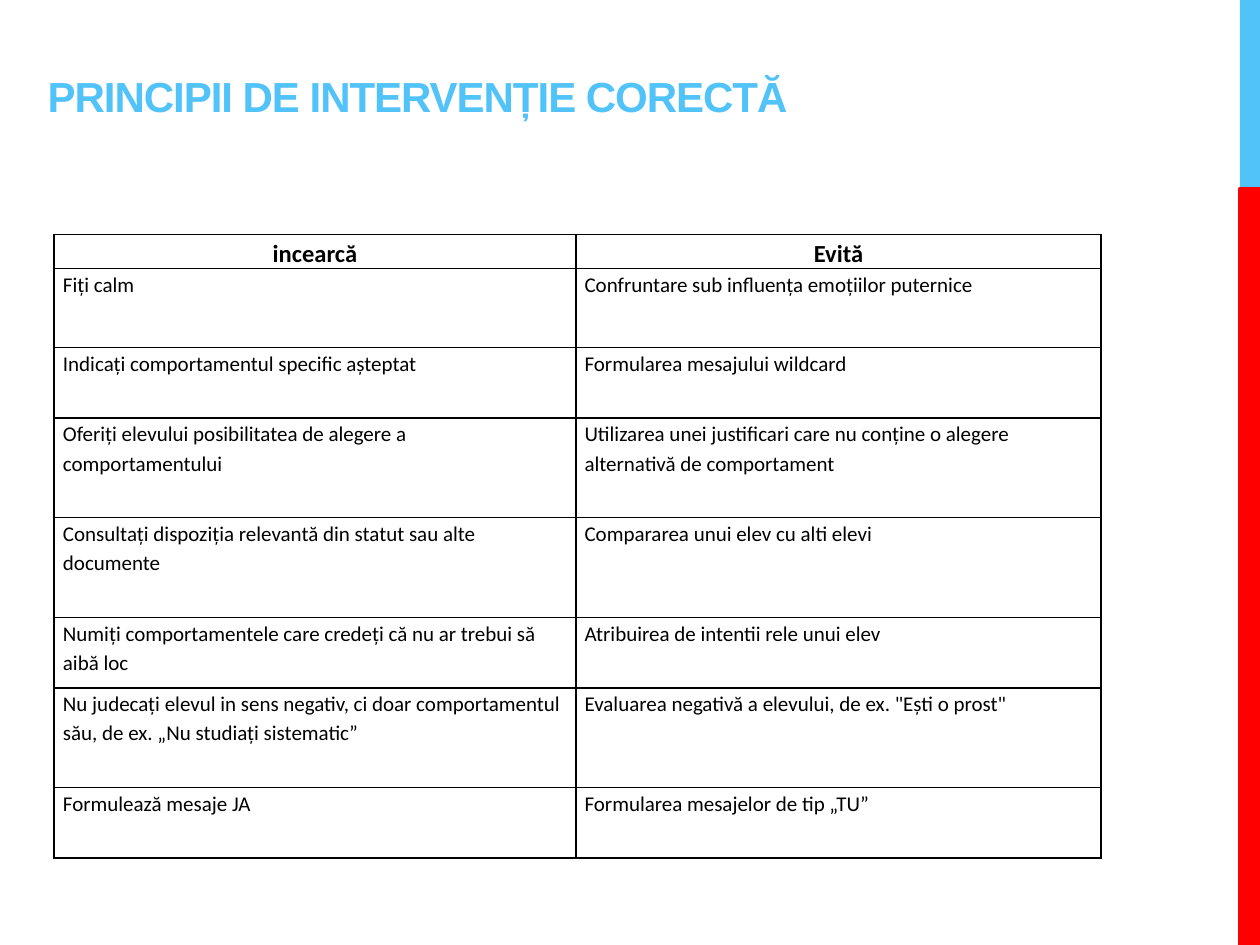
import pptx
import pptx.dml.color
import pptx.enum.shapes
import pptx.enum.text
import pptx.oxml
import pptx.oxml.ns
import pptx.util
from pptx.util import Inches

BLUE, RED, BLACK = "51C3F9", "FF0000", "000000"
COLUMN_WIDTHS = [4.14, 4.17]
ROW_HEIGHTS = [0.27, 0.63, 0.56, 0.79, 0.79, 0.56, 0.79, 0.56]
ROWS = [
    ("incearcă", "Evită"),
    ("Fiți calm", "Confruntare sub influența emoțiilor puternice"),
    ("Indicați comportamentul specific așteptat", "Formularea mesajului wildcard"),
    ("Oferiți elevului posibilitatea de alegere a comportamentului",
     "Utilizarea unei justificari care nu conține o alegere alternativă de comportament"),
    ("Consultați dispoziția relevantă din statut sau alte documente",
     "Compararea unui elev cu alti elevi"),
    ("Numiți comportamentele care credeți că nu ar trebui să aibă loc",
     "Atribuirea de intentii rele unui elev"),
    ("Nu judecați elevul in sens negativ, ci doar comportamentul său, "
     "de ex. „Nu studiați sistematic”",
     "Evaluarea negativă a elevului, de ex. \"Ești o prost\""),
    ("Formulează mesaje JA", "Formularea mesajelor de tip „TU”"),
]


def color(value):
    return pptx.dml.color.RGBColor.from_string(value)


def write_text(frame, text, size, font="Calibri", fill=BLACK, bold=False,
               centered=False, line_spacing=1.0, character_spacing=0):
    frame.word_wrap = True
    paragraph = frame.paragraphs[0]
    alignment = pptx.enum.text.PP_ALIGN
    paragraph.alignment = alignment.CENTER if centered else alignment.LEFT
    paragraph.line_spacing = line_spacing
    run = paragraph.add_run()
    run.text = text
    run.font.name = font
    run.font.size = pptx.util.Pt(size)
    run.font.bold = bold
    run.font.color.rgb = color(fill)
    if character_spacing:
        run.font._element.set("spc", str(round(character_spacing * 100)))


def add_side_bar(slide, top, height, fill, line_width=0):
    shape = slide.shapes.add_shape(
        pptx.enum.shapes.MSO_SHAPE.RECTANGLE,
        Inches(9.84), Inches(top), Inches(0.16), Inches(height))
    shape.shadow.inherit = False
    shape.fill.solid()
    shape.fill.fore_color.rgb = color(fill)
    if line_width:
        shape.line.color.rgb = color(fill)
        shape.line.width = pptx.util.Pt(line_width)
    else:
        shape.line.fill.background()


def add_title(slide, text):
    box = slide.shapes.add_textbox(Inches(0.28), Inches(0.17), Inches(6.93), Inches(1.22))
    frame = box.text_frame
    frame.vertical_anchor = pptx.enum.text.MSO_ANCHOR.BOTTOM
    frame.margin_bottom = Inches(0.43)
    write_text(frame, text, 24, font="Arial", fill=BLUE, bold=True, character_spacing=-0.6)


def set_borders(cell, width=1):
    properties = cell._tc.get_or_add_tcPr()
    for position, side in enumerate(("lnL", "lnR", "lnT", "lnB")):
        border = pptx.oxml.parse_xml(
            f'<a:{side} {pptx.oxml.ns.nsdecls("a")} w="{pptx.util.Pt(width)}">'
            f'<a:solidFill><a:srgbClr val="{BLACK}"/></a:solidFill></a:{side}>')
        properties.insert(position, border)


def add_principles_table(slide):
    table = slide.shapes.add_table(
        len(ROWS), len(COLUMN_WIDTHS), Inches(0.43), Inches(1.86),
        Inches(sum(COLUMN_WIDTHS)), Inches(sum(ROW_HEIGHTS))).table
    table.first_row = False
    table.horz_banding = False
    for column, width in zip(table.columns, COLUMN_WIDTHS):
        column.width = Inches(width)
    for index, (row, height, texts) in enumerate(zip(table.rows, ROW_HEIGHTS, ROWS)):
        row.height = Inches(height)
        header = index == 0
        for cell, text in zip(row.cells, texts):
            cell.margin_left = cell.margin_right = Inches(0.07)
            cell.margin_top = cell.margin_bottom = 0
            cell.fill.background()
            set_borders(cell)
            write_text(cell.text_frame, text, 14 if header else 12, bold=header,
                       centered=header, line_spacing=1.15)


def main():
    presentation = pptx.Presentation()
    presentation.slide_width = Inches(10)
    presentation.slide_height = Inches(7.5)
    slide = presentation.slides.add_slide(presentation.slide_layouts[6])
    add_side_bar(slide, 0, 1.5, BLUE)
    add_side_bar(slide, 1.5, 6, RED, line_width=2.25)
    add_title(slide, "PRINCIPII DE INTERVENȚIE CORECTĂ")
    add_principles_table(slide)
    presentation.save("out.pptx")


if __name__ == "__main__":
    main()
